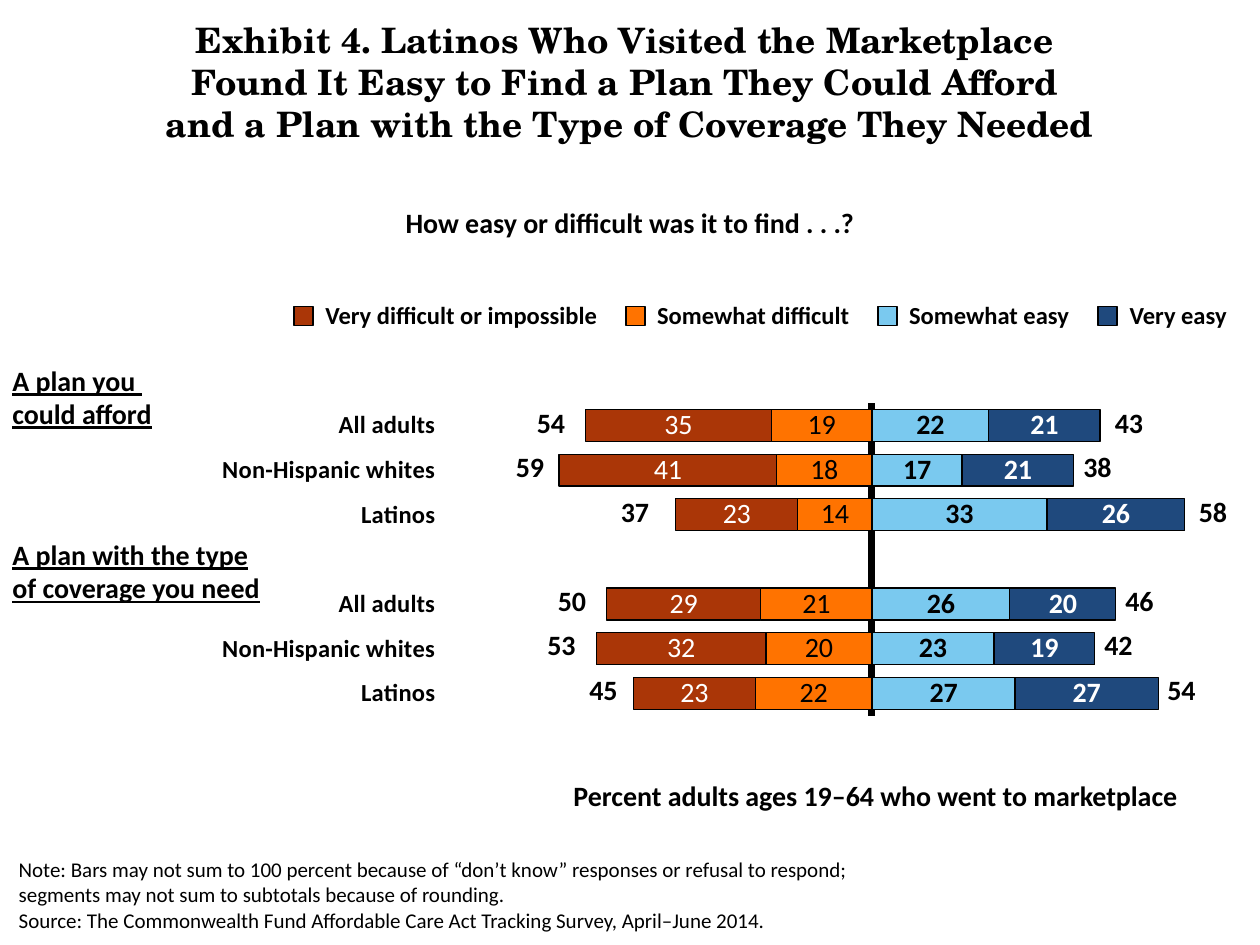
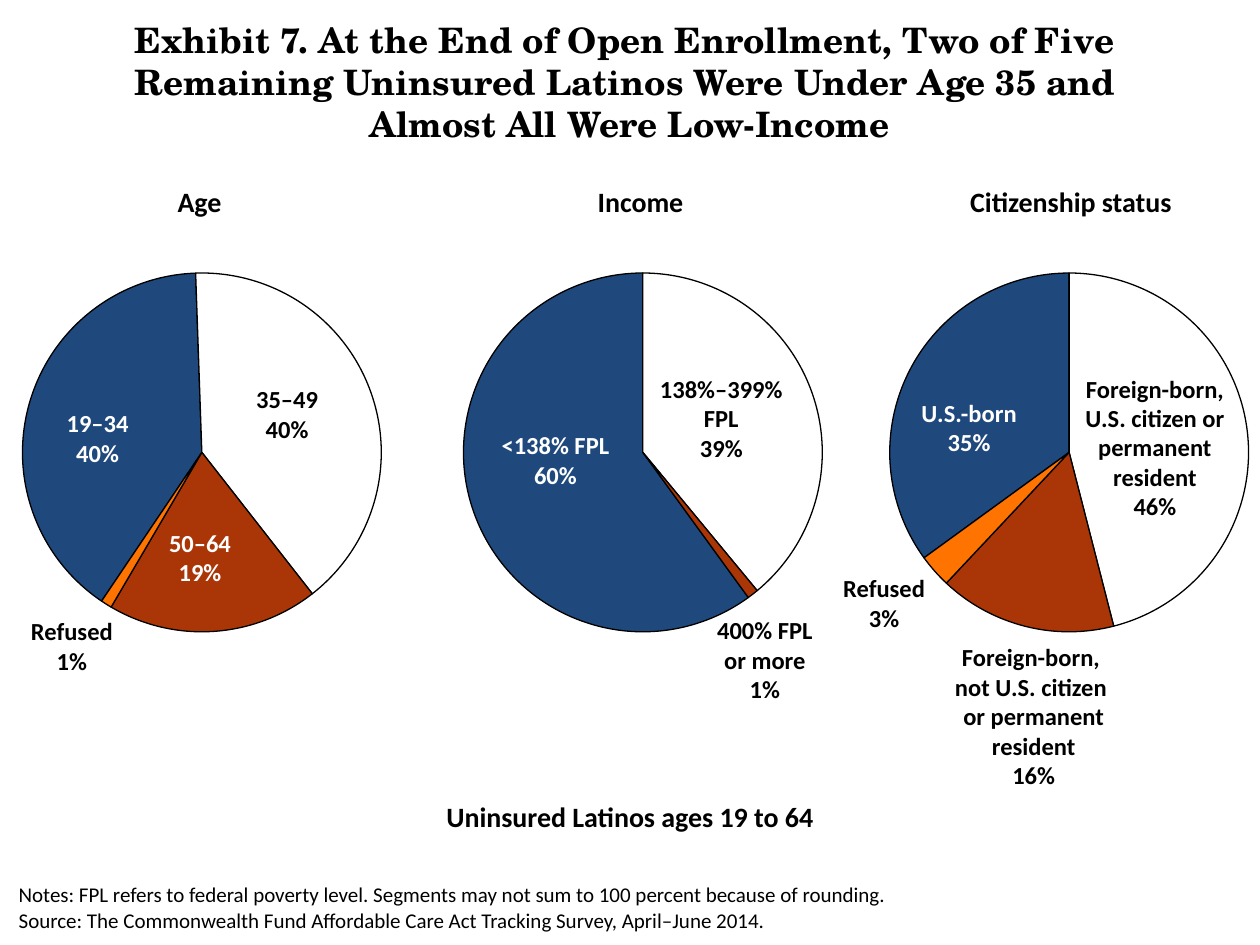
"""Builds two exhibit slides on Latinos and the health insurance marketplace."""
import pptx
import pptx.chart.data
import pptx.dml.color
import pptx.enum.chart
import pptx.enum.shapes
import pptx.enum.text
import pptx.oxml.ns
import pptx.util
from lxml import etree

RGB = pptx.dml.color.RGBColor
BLACK = RGB(0, 0, 0)
WHITE = RGB(255, 255, 255)
ORANGE = RGB(0xFF, 0x73, 0x00)
RUST = RGB(0xAA, 0x36, 0x07)
SKY = RGB(0x7A, 0xC9, 0xEF)
NAVY = RGB(0x1F, 0x49, 0x7D)

SANS = "Calibri"
SERIF = "TeX Gyre Schola"
COLS, ROWS = 120, 90
CELL = pptx.util.Inches(10) / COLS
LEFT = pptx.enum.text.PP_ALIGN.LEFT
MID = pptx.enum.text.PP_ALIGN.CENTER
RIGHT = pptx.enum.text.PP_ALIGN.RIGHT

SOURCE = "Source: The Commonwealth Fund Affordable Care Act Tracking Survey, April–June 2014."

GROUPS = ["All adults", "Non-Hispanic whites", "Latinos"]
CATS = GROUPS[::-1] + [""] + GROUPS[::-1]
SERIES = [
    ([-22, -20, -21, None, -14, -18, -19], ORANGE, BLACK, False),
    ([-23, -32, -29, None, -23, -41, -35], RUST, WHITE, False),
    ([27, 23, 26, None, 33, 17, 22], SKY, BLACK, True),
    ([27, 19, 20, None, 26, 21, 21], NAVY, WHITE, True),
]
LEGEND = [
    ("Very difficult or impossible", RUST, 28, 30),
    ("Somewhat difficult", ORANGE, 59.6, 22.2),
    ("Somewhat easy", SKY, 83.6, 18.6),
    ("Very easy", NAVY, 104.6, 13.6),
]
# Bar number from the top, then text and column of the left and right totals.
TOTALS = [
    (0, "54", 49, "43", 105),
    (1, "59", 47, "38", 102),
    (2, "37", 57, "58", 113),
    (4, "50", 51, "46", 106),
    (5, "53", 50, "42", 104),
    (6, "45", 54, "54", 110),
]
TOP_BAR, BAR_STEP = 38, 4.24

# Heading with its column and width, chart column, start angle, values.
PIES = [
    ("Age", 0, 38, -8, 214, [40, 40, 19, 1]),
    ("Income", 41, 40, 34, 144, [60, 39, 1]),
    ("Citizenship status", 84, 36, 74.6, 234, [35, 46, 16, 3]),
]
SLICES = [NAVY, WHITE, RUST, ORANGE]
TAGS = [
    ("19–34\n40%", 3, 38.3, 12.6, 6.8, WHITE),
    ("35–49\n40%", 21.7, 36, 11.3, 6.8, BLACK),
    ("50–64\n19%", 13, 49.7, 12.1, 6.8, WHITE),
    ("Refused\n1%", -3, 58.1, 19.7, 6.8, BLACK),
    ("<138% FPL\n60%", 46, 40.4, 13.8, 6.8, WHITE),
    ("138%–399% FPL\n39%", 61, 35, 15.4, 9.7, BLACK),
    ("400% FPL or more\n1%", 66, 58, 13.7, 9.7, BLACK),
    ("U.S.-born\n35%", 86, 37.3, 12.6, 6.8, WHITE),
    ("Foreign-born, U.S. citizen or permanent resident\n46%", 101, 35, 18, 15.4, BLACK),
    ("Foreign-born, \vnot U.S. citizen \vor permanent resident\n16%",
     88, 60.6, 20.9, 15.4, BLACK),
    ("Refused\n3%", 78.4, 54, 11.6, 6.8, BLACK),
]


def grid(*cells):
    """Turn grid cells into lengths."""
    return [pptx.util.Emu(round(n * CELL)) for n in cells]


def style(font, size, color=BLACK, bold=True, name=SANS):
    """Set the look of a font."""
    font.name, font.size, font.bold = name, pptx.util.Pt(size), bold
    font.color.rgb = color


def outline(form, color, width):
    """Give a shape, bar or slice a solid fill and a black edge."""
    form.fill.solid()
    form.fill.fore_color.rgb = color
    form.line.color.rgb = BLACK
    form.line.width = pptx.util.Pt(width)


def write(slide, text, x, y, w, h, size=16, align=LEFT, color=BLACK, bold=True, under=None):
    """Add a text box whose paragraphs share one style."""
    frame = slide.shapes.add_textbox(*grid(x, y, w, h)).text_frame
    frame.word_wrap = True
    frame.text = text
    for para in frame.paragraphs:
        para.alignment = align
        style(para.font, size, color, bold)
        para.font.underline = under


def start(deck, text):
    """Add a slide with its title."""
    slide = deck.slides.add_slide(deck.slide_layouts[5])
    title = slide.shapes.title
    title.left, title.top, title.width, title.height = grid(0, 1.2, COLS, 13.2)
    frame = title.text_frame
    frame.word_wrap = True
    frame.auto_size = pptx.enum.text.MSO_AUTO_SIZE.NONE
    frame.vertical_anchor = pptx.enum.text.MSO_ANCHOR.MIDDLE
    frame.text = text
    para = frame.paragraphs[0]
    para.alignment = MID
    style(para.font, 20, name=SERIF)
    return slide


def notes(slide, text, y, w):
    """Add the small note and the source at the foot."""
    write(slide, f"{text}\n{SOURCE}", 0.6, y, w, 89.4 - y, size=12, bold=False)


def child(root, tag, val):
    """Append a chart element with a value."""
    etree.SubElement(root, pptx.oxml.ns.qn(f"c:{tag}")).set("val", str(val))


def layout(chart, x, y, w, h):
    """Fix the inner plot area as shares of the chart."""
    qn = pptx.oxml.ns.qn
    area = chart.element.find(f".//{qn('c:plotArea')}")
    for old in area.findall(qn("c:layout")):
        area.remove(old)
    box = etree.Element(qn("c:layout"))
    area.insert(0, box)
    manual = etree.SubElement(box, qn("c:manualLayout"))
    parts = {"layoutTarget": "inner", "xMode": "edge", "yMode": "edge",
             "x": x, "y": y, "w": w, "h": h}
    for tag, val in parts.items():
        child(manual, tag, val)


def plot(slide, kind, cats, rows, place, share):
    """Add a chart without title or legend."""
    data = pptx.chart.data.CategoryChartData()
    data.categories = cats
    for n, vals in enumerate(rows, 1):
        data.add_series(f"Series {n}", vals)
    chart = slide.shapes.add_chart(kind, *grid(*place), data).chart
    chart.has_title = chart.has_legend = False
    layout(chart, *share)
    return chart


def bars(slide):
    """Add the stacked bars that part at zero."""
    enum = pptx.enum.chart
    chart = plot(slide, enum.XL_CHART_TYPE.BAR_STACKED, CATS, [row[0] for row in SERIES],
                 (7, 24, 111.4, 48), (0.32, 0.3, 0.68, 0.62))
    style(chart.font, 16)
    body = chart.plots[0]
    body.gap_width, body.overlap, body.vary_by_categories = 40, 100, False
    for series, (_, fill, ink, bold) in zip(body.series, SERIES):
        outline(series.format, fill, 0.75)
        series.invert_if_negative = False
        tags = series.data_labels
        tags.show_value = True
        tags.number_format, tags.number_format_is_linked = "0;0", False
        tags.position = enum.XL_LABEL_POSITION.CENTER
        style(tags.font, 16, ink, bold)
    axis = chart.category_axis
    axis.tick_label_position = enum.XL_TICK_LABEL_POSITION.LOW
    axis.major_tick_mark = axis.minor_tick_mark = enum.XL_TICK_MARK.NONE
    style(axis.tick_labels.font, 14)
    axis.format.line.color.rgb = BLACK
    axis.format.line.width = pptx.util.Pt(4)
    scale = chart.value_axis
    scale.minimum_scale, scale.maximum_scale, scale.major_unit = -80, 70, 10
    scale.has_major_gridlines = scale.visible = False


def pie(slide, x, angle, vals):
    """Add a pie turned to its start angle."""
    cats = [str(n + 1) for n in range(len(vals))]
    chart = plot(slide, pptx.enum.chart.XL_CHART_TYPE.PIE, cats, [vals],
                 (x, 18.8, 53.4, 45), (0.19, 0.08, 0.64, 0.92))
    style(chart.font, 18, bold=False)
    body = chart.plots[0]
    body.vary_by_categories = True
    series = body.series[0]
    for n, color in enumerate(SLICES[:len(vals)]):
        outline(series.points[n].format, color, 0.75)
    root = chart.element.find(f".//{pptx.oxml.ns.qn('c:pieChart')}")
    for old in root.findall(pptx.oxml.ns.qn("c:firstSliceAng")):
        root.remove(old)
    child(root, "firstSliceAng", angle)


def key(slide, text, color, x, w):
    """Add a legend swatch with its label."""
    kind = pptx.enum.shapes.MSO_SHAPE.RECTANGLE
    swatch = slide.shapes.add_shape(kind, *grid(x, 29.2, 1.8, 1.8))
    swatch.shadow.inherit = False
    outline(swatch, color, 1)
    write(slide, text, x + 1.8, 28, w, 4.1, size=14)


def ease(deck):
    """Build the slide on finding a plan."""
    slide = start(deck, "Exhibit 4. Latinos Who Visited the Marketplace \v"
                        "Found It Easy to Find a Plan They Could Afford \v"
                        "and a Plan with the Type of Coverage They Needed")
    bars(slide)
    write(slide, "How easy or difficult was it to find . . .?", 1.6, 19, 116.8, 4.4, align=MID)
    write(slide, "Percent adults ages 19–64 who went to marketplace",
          49, 73.6, 68.8, 4.4, align=MID)
    write(slide, "A plan you \vcould afford", 0, 34, 20, 7.7, under=True)
    write(slide, "A plan with the type of coverage you need", 0, 50.6, 27, 7.7, under=True)
    for item in LEGEND:
        key(slide, *item)
    for row, hard, left, easy, right in TOTALS:
        y = TOP_BAR + BAR_STEP * row
        write(slide, hard, left, y, 6, 4.4, align=RIGHT)
        write(slide, easy, right, y, 6, 4.4)
    notes(slide, "Note: Bars may not sum to 100 percent because of “don’t know” responses "
                 "or refusal to respond; segments may not sum to subtotals because of rounding.",
          81, 86.4)


def share(deck):
    """Build the slide on who stays uninsured."""
    slide = start(deck, "Exhibit 7. At the End of Open Enrollment, Two of Five \v"
                        "Remaining Uninsured Latinos Were Under Age 35 and \v"
                        "Almost All Were Low-Income")
    for head, left, wide, x, angle, vals in PIES:
        write(slide, head, left, 17, wide, 4.4, align=MID)
        pie(slide, x, angle, vals)
    for text, x, y, w, h, color in TAGS:
        write(slide, text, x, y, w, h, size=14, align=MID, color=color)
    write(slide, "Uninsured Latinos ages 19 to 64", 0.6, 75.6, 118.8, 4.4, align=MID)
    notes(slide, "Notes: FPL refers to federal poverty level. "
                 "Segments may not sum to 100 percent because of rounding.", 83.4, 117.4)


def main():
    """Build and save the deck."""
    deck = pptx.Presentation()
    deck.slide_width, deck.slide_height = grid(COLS, ROWS)
    ease(deck)
    share(deck)
    deck.save("out.pptx")


if __name__ == "__main__":
    main()
